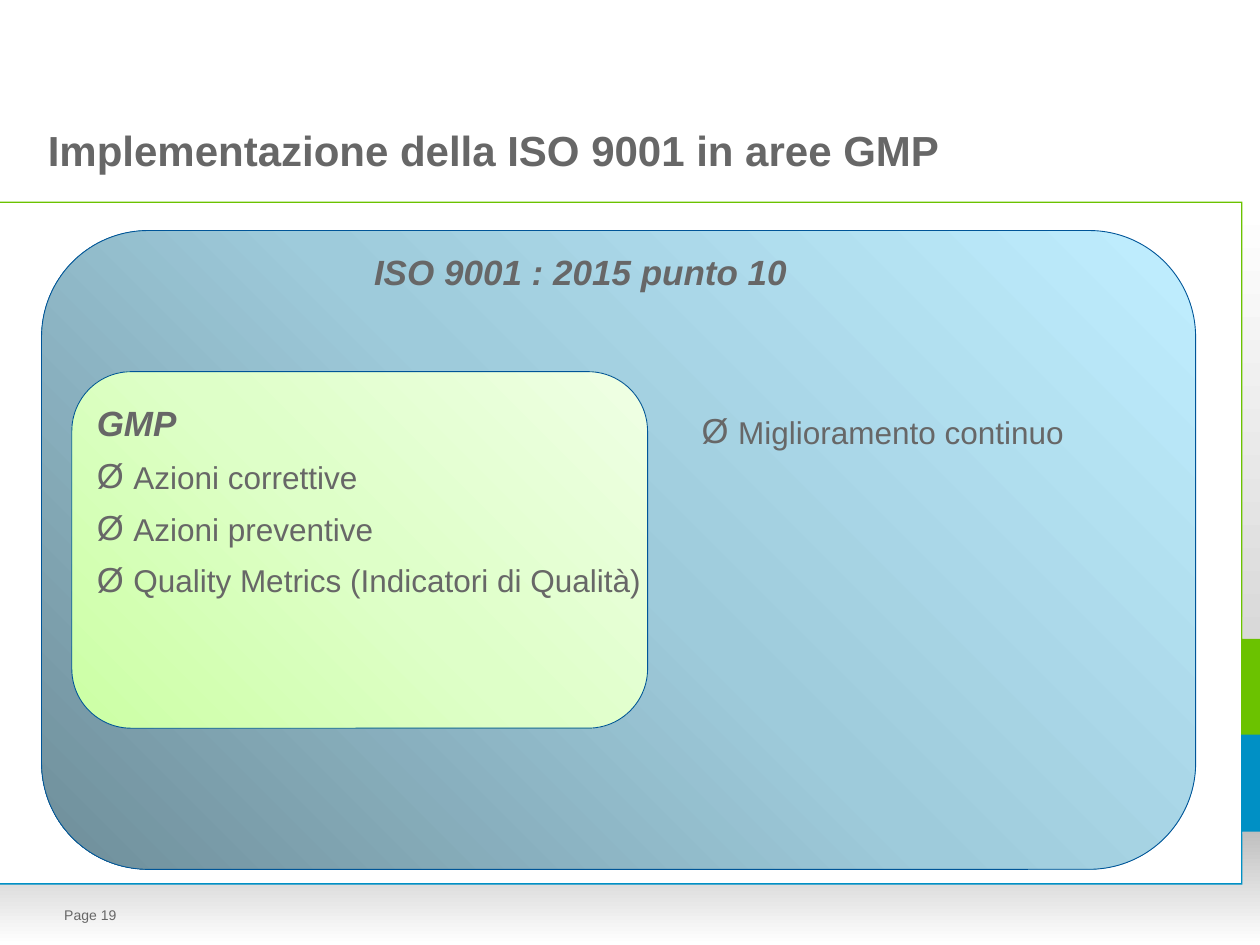
from typing import NamedTuple, Optional

from pptx import Presentation
from pptx import util as u
from pptx.dml.color import RGBColor
from pptx.enum import shapes, text
from pptx.oxml import parse_xml
from pptx.oxml.ns import nsdecls, qn

# Grid of square cells: 100 columns by 75 rows
CELL = u.Inches(0.1)
COLS, ROWS = 100, 75
FRAME_X, FRAME_TOP, FRAME_BOTTOM = 98.6, 16, 70.2
RULE = 0.1
FONT = "Arial"
COLORS = {
    "text": "676767", "outline": "005598", "green": "6BC200", "blue": "0090C5",
    "grey": "BFBFBF", "silver": "D9D9D9", "white": "FFFFFF",
    "iso_dark": "6F8E9A", "iso_mid": "9ECBDB", "iso_light": "C0EEFF",
    "gmp_dark": "CCFFA5", "gmp_mid": "DEFFC8", "gmp_light": "EFFFE4",
}
FROM_BOTTOM_LEFT = ('<a:path path="circle">'
                    '<a:fillToRect l="0" t="100000" r="100000" b="0"/></a:path>')


class Box(NamedTuple):
    col: float
    row: float
    cols: float
    rows: float


class Gradient(NamedTuple):
    colors: tuple
    angle: Optional[int] = None  # None: spreads from the bottom left corner


class Band(NamedTuple):
    points: tuple
    fill: object


class Panel(NamedTuple):
    box: Box
    fill: Gradient


class Line(NamedTuple):
    words: str
    style: str


class Label(NamedTuple):
    box: Box
    lines: tuple
    anchor: text.MSO_ANCHOR = text.MSO_ANCHOR.TOP
    inset: bool = True


STYLES = {
    "title": {"size": u.Pt(24), "bold": True},
    "heading": {"size": u.Pt(20), "bold": True, "italic": True},
    "bullet": {"size": u.Pt(18)},
    "page": {"size": u.Pt(8)},
}

# Footer, side strip and the two-coloured frame
BANDS = (
    Band(((COLS, ROWS), (COLS, 65.9), (FRAME_X, 65.9), (FRAME_X, FRAME_BOTTOM),
          (0, FRAME_BOTTOM), (0, ROWS)), Gradient(("grey", "white"), 90)),
    Band(((FRAME_X, FRAME_TOP), (COLS, FRAME_TOP), (COLS, 50.8), (FRAME_X, 50.8)),
         Gradient(("silver", "white"), 270)),
    Band(((FRAME_X, 50.7), (FRAME_X, FRAME_TOP), (0, FRAME_TOP),
          (0, FRAME_TOP + RULE), (FRAME_X - RULE, FRAME_TOP + RULE),
          (FRAME_X - RULE, 58.4), (COLS, 58.4), (COLS, 50.7)), "green"),
    Band(((COLS, 58.3), (FRAME_X - RULE, 58.3), (FRAME_X - RULE, FRAME_BOTTOM - RULE),
          (0, FRAME_BOTTOM - RULE), (0, FRAME_BOTTOM), (FRAME_X, FRAME_BOTTOM),
          (FRAME_X, 66), (COLS, 66)), "blue"),
)

# The GMP area lies inside the ISO area
PANELS = (
    Panel(Box(3.3, 18.3, 91.6, 50.7), Gradient(("iso_dark", "iso_mid", "iso_light"))),
    Panel(Box(5.7, 29.5, 45.7, 28.3), Gradient(("gmp_dark", "gmp_mid", "gmp_light"), 315)),
)

LABELS = (
    Label(Box(5.1, 70.3, 70, 4.7), (Line("Page 19", "page"),),
          text.MSO_ANCHOR.MIDDLE, False),
    Label(Box(3.8, 7.6, 88, 6.3),
          (Line("Implementazione della ISO 9001 in aree GMP", "title"),),
          text.MSO_ANCHOR.BOTTOM, False),
    Label(Box(28.7, 19.4, 45.2, 5.8), (Line("ISO 9001 : 2015 punto 10", "heading"),)),
    Label(Box(6.7, 31.4, 47, 24.4), (
        Line("GMP", "heading"),
        Line("Azioni correttive", "bullet"),
        Line("Azioni preventive", "bullet"),
        Line("Quality Metrics (Indicatori di Qualità)", "bullet"))),
    Label(Box(54.7, 32.3, 41.4, 27.7), (Line("Miglioramento continuo", "bullet"),)),
)


def cells(*counts: float) -> list:
    return [round(count * CELL) for count in counts]


def rgb(name: str) -> RGBColor:
    return RGBColor.from_string(COLORS[name])


def paint(shape, fill) -> None:
    shape.shadow.inherit = False
    if isinstance(fill, str):
        shape.fill.solid()
        shape.fill.fore_color.rgb = rgb(fill)
        return
    last = len(fill.colors) - 1
    stops = "".join(
        f'<a:gs pos="{100000 * i // last}"><a:srgbClr val="{COLORS[name]}"/></a:gs>'
        for i, name in enumerate(fill.colors))
    course = (FROM_BOTTOM_LEFT if fill.angle is None
              else f'<a:lin ang="{fill.angle * 60000}" scaled="0"/>')
    shape.fill.gradient()
    properties = shape._element.spPr
    properties.replace(properties.find(qn("a:gradFill")), parse_xml(
        f'<a:gradFill {nsdecls("a")} rotWithShape="1">'
        f'<a:gsLst>{stops}</a:gsLst>{course}</a:gradFill>'))


def draw_band(slide, band: Band) -> None:
    start, *rest = [cells(*point) for point in band.points]
    builder = slide.shapes.build_freeform(*start, scale=1.0)
    builder.add_line_segments(rest, close=True)
    outline = builder.convert_to_shape()
    paint(outline, band.fill)
    outline.line.fill.background()


def draw_panel(slide, panel: Panel) -> None:
    area = slide.shapes.add_shape(shapes.MSO_SHAPE.ROUNDED_RECTANGLE, *cells(*panel.box))
    paint(area, panel.fill)
    area.line.color.rgb = rgb("outline")
    area.line.width = u.Pt(0.5)


def add_bullet(paragraph) -> None:
    properties = paragraph._p.get_or_add_pPr()
    indent = u.Inches(0.29)
    properties.set("marL", str(indent))
    properties.set("indent", str(-indent))
    for tag in ('buSzPct {} val="110000"', f'buFont {{}} typeface="{FONT}"',
                'buChar {} char="Ø"'):
        properties.append(parse_xml(f'<a:{tag.format(nsdecls("a"))}/>'))


def draw_label(slide, label: Label) -> None:
    frame = slide.shapes.add_textbox(*cells(*label.box)).text_frame
    frame.word_wrap = True
    frame.vertical_anchor = label.anchor
    if not label.inset:
        for side in ("left", "top", "right", "bottom"):
            setattr(frame, f"margin_{side}", 0)
    for i, line in enumerate(label.lines):
        paragraph = frame.add_paragraph() if i else frame.paragraphs[0]
        if line.style == "bullet":
            add_bullet(paragraph)
        if i:
            paragraph.space_before = u.Pt(8)
        run = paragraph.add_run()
        run.text = line.words
        for key, value in {"name": FONT, **STYLES[line.style]}.items():
            setattr(run.font, key, value)
        run.font.color.rgb = rgb("text")


def main() -> None:
    deck = Presentation()
    deck.slide_width, deck.slide_height = cells(COLS, ROWS)
    slide = deck.slides.add_slide(deck.slide_layouts[6])
    for draw, parts in ((draw_band, BANDS), (draw_panel, PANELS), (draw_label, LABELS)):
        for part in parts:
            draw(slide, part)
    deck.save("out.pptx")


if __name__ == "__main__":
    main()
